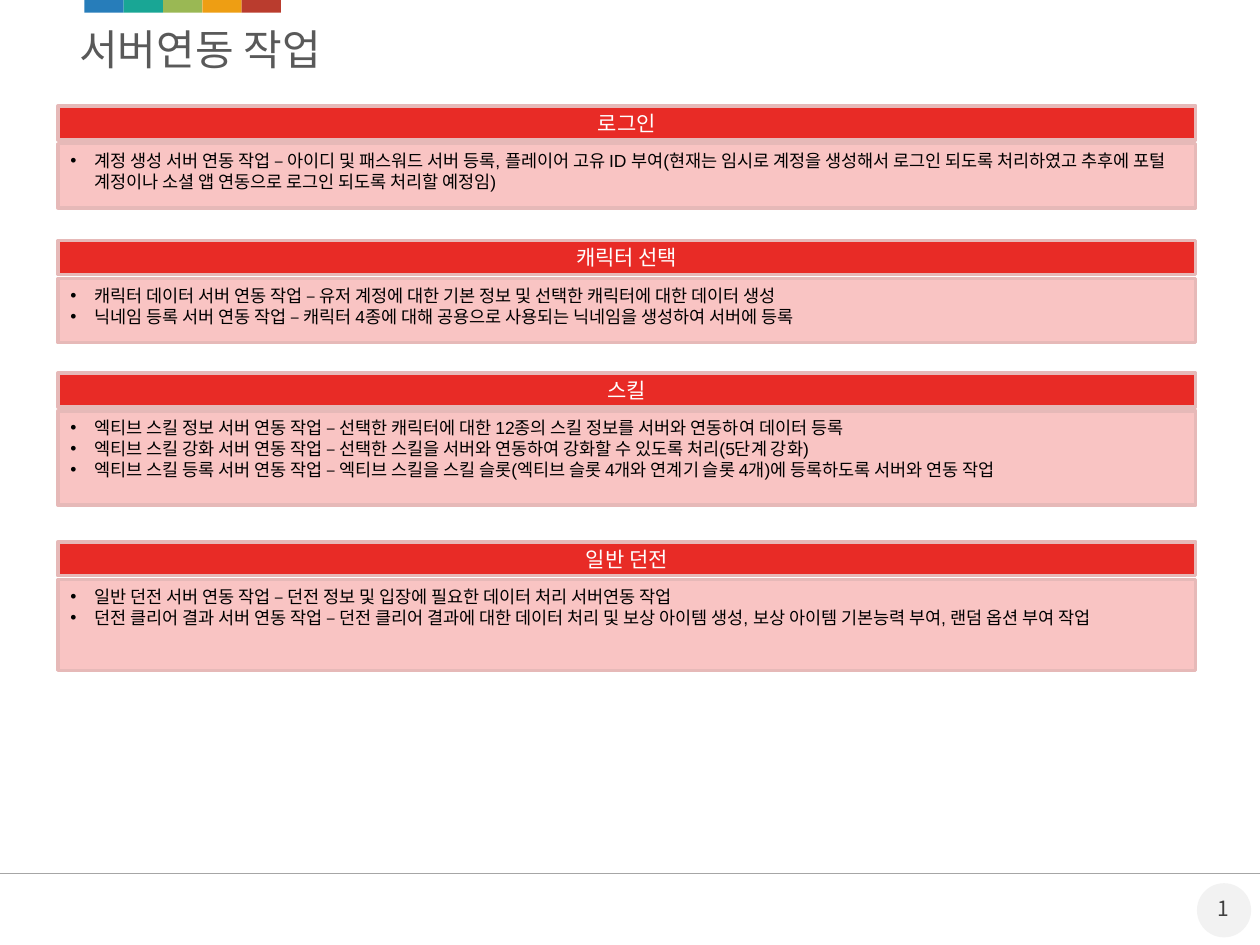
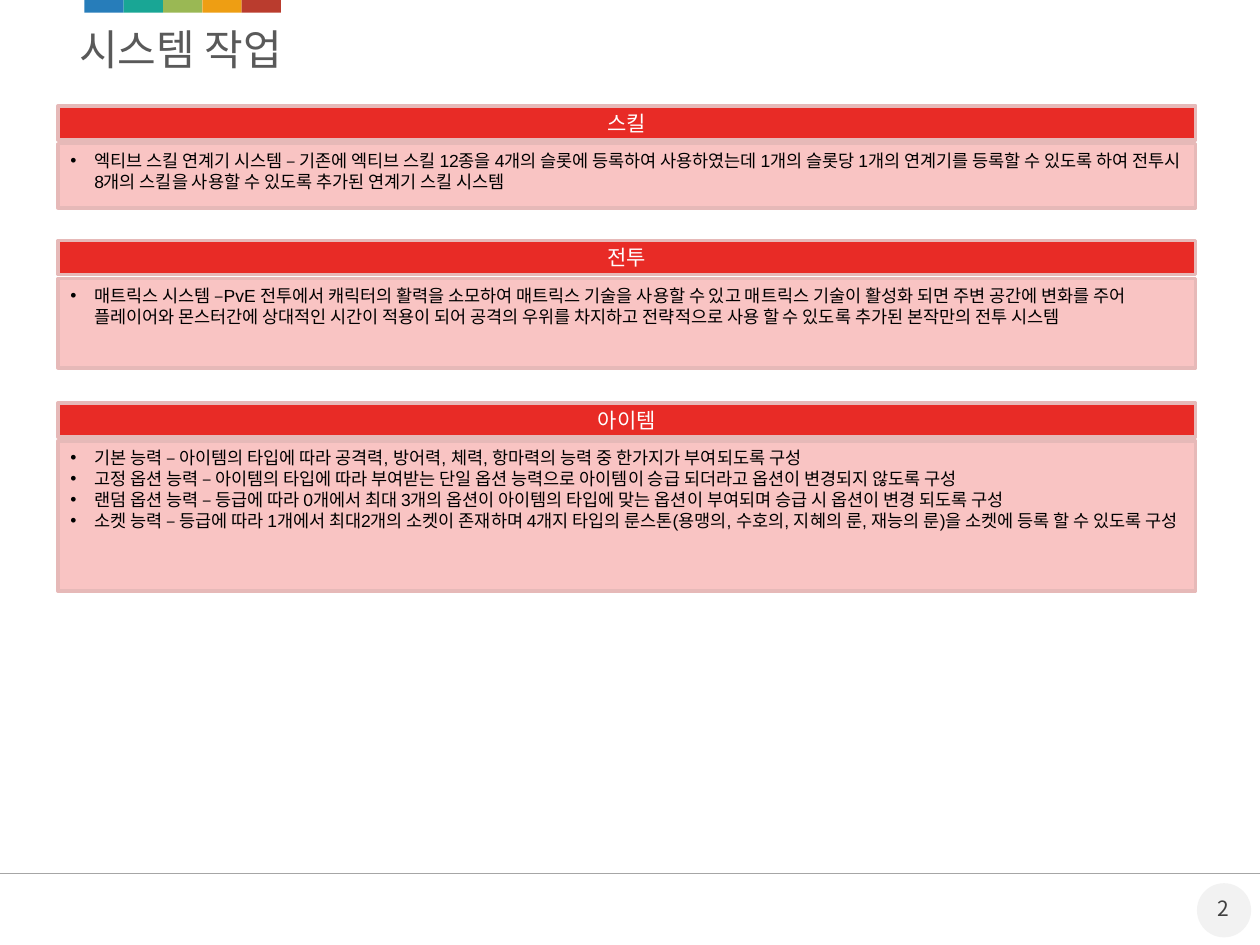
"""Build two work-summary slides made of titled red panels."""
import pptx
import pptx.dml.color
import pptx.enum.shapes
import pptx.enum.text
import pptx.oxml
import pptx.oxml.ns
import pptx.util
from lxml import etree

Inches = pptx.util.Inches
Pt = pptx.util.Pt
RGBColor = pptx.dml.color.RGBColor
MSO_SHAPE = pptx.enum.shapes.MSO_SHAPE
PP_ALIGN = pptx.enum.text.PP_ALIGN
MSO_ANCHOR = pptx.enum.text.MSO_ANCHOR
qn = pptx.oxml.ns.qn

WHITE = RGBColor(0xFF, 0xFF, 0xFF)
BLACK = RGBColor(0x00, 0x00, 0x00)
TITLE_GREY = RGBColor(0x59, 0x59, 0x59)
NUMBER_GREY = RGBColor(0x40, 0x40, 0x40)
RULE_GREY = RGBColor(0xA6, 0xA6, 0xA6)
BADGE_GREY = RGBColor(0xF2, 0xF2, 0xF2)
HEADER_RED = RGBColor(0xE8, 0x2B, 0x26)
BODY_PINK = RGBColor(0xF9, 0xC4, 0xC3)
BORDER_PINK = RGBColor(0xE6, 0xB9, 0xB8)
BAND_COLORS = (
    RGBColor(0x27, 0x7D, 0xBA),
    RGBColor(0x19, 0xA6, 0x95),
    RGBColor(0x9A, 0xB8, 0x54),
    RGBColor(0xEE, 0x9E, 0x13),
    RGBColor(0xBA, 0x3C, 0x2E),
)
FONT = "Arial"
NUMBER_FONT = "Noto Sans CJK KR"

PANEL_LEFT, PANEL_WIDTH = 0.46, 9.03
HEADER_HEIGHT, BODY_OFFSET = 0.27, 0.3

SLIDES = [
    ("서버연동 작업", [
        (0.84, 0.51, "로그인", [
            "계정 생성 서버 연동 작업 – 아이디 및 패스워드 서버 등록, 플레이어 고유 ID 부여(현재는 임시로 계정을 생성해서 "
            "로그인 되도록 처리하였고 추후에 포털 계정이나 소셜 앱 연동으로 로그인 되도록 처리할 예정임)",
        ]),
        (1.91, 0.51, "캐릭터 선택", [
            "캐릭터 데이터 서버 연동 작업 – 유저 계정에 대한 기본 정보 및 선택한 캐릭터에 대한 데이터 생성",
            "닉네임 등록 서버 연동 작업 – 캐릭터 4종에 대해 공용으로 사용되는 닉네임을 생성하여 서버에 등록",
        ]),
        (2.96, 0.75, "스킬", [
            "엑티브 스킬 정보 서버 연동 작업 – 선택한 캐릭터에 대한 12종의 스킬 정보를 서버와 연동하여 데이터 등록",
            "엑티브 스킬 강화 서버 연동 작업 – 선택한 스킬을 서버와 연동하여 강화할 수 있도록 처리(5단계 강화)",
            "엑티브 스킬 등록 서버 연동 작업 – 엑티브 스킬을 스킬 슬롯(엑티브 슬롯 4개와 연계기 슬롯 4개)에 "
            "등록하도록 서버와 연동 작업",
        ]),
        (4.3, 0.72, "일반 던전", [
            "일반 던전 서버 연동 작업 – 던전 정보 및 입장에 필요한 데이터 처리 서버연동 작업",
            "던전 클리어 결과 서버 연동 작업 – 던전 클리어 결과에 대한 데이터 처리 및 보상 아이템 생성, "
            "보상 아이템 기본능력 부여, 랜덤 옵션 부여 작업",
        ]),
    ]),
    ("시스템 작업", [
        (0.84, 0.51, "스킬", [
            "엑티브 스킬 연계기 시스템 – 기존에 엑티브 스킬 12종을 4개의 슬롯에 등록하여 사용하였는데 1개의 슬롯당 "
            "1개의 연계기를 등록할 수 있도록 하여 전투시 8개의 스킬을 사용할 수 있도록 추가된 연계기 스킬 시스템",
        ]),
        (1.91, 0.71, "전투", [
            "매트릭스 시스템 –PvE 전투에서 캐릭터의 활력을 소모하여 매트릭스 기술을 사용할 수 있고 매트릭스 기술이 "
            "활성화 되면 주변 공간에 변화를 주어 플레이어와 몬스터간에 상대적인 시간이 적용이 되어 공격의 우위를 "
            "차지하고 전략적으로 사용 할 수 있도록 추가된 본작만의 전투 시스템",
        ]),
        (3.2, 1.19, "아이템", [
            "기본 능력 – 아이템의 타입에 따라 공격력, 방어력, 체력, 항마력의 능력 중 한가지가 부여되도록 구성",
            "고정 옵션 능력 – 아이템의 타입에 따라 부여받는 단일 옵션 능력으로 아이템이 승급 되더라고 옵션이 변경되지 "
            "않도록 구성",
            "랜덤 옵션 능력 – 등급에 따라 0개에서 최대 3개의 옵션이 아이템의 타입에 맞는 옵션이 부여되며 승급 시 옵션이 "
            "변경 되도록 구성",
            "소켓 능력 – 등급에 따라 1개에서 최대2개의 소켓이 존재하며 4개지 타입의 룬스톤(용맹의, 수호의, 지혜의 룬, "
            "재능의 룬)을 소켓에 등록 할 수 있도록 구성",
        ]),
    ]),
]


def style_font(font, size, color, name=FONT):
    """Set size, colour and typeface of a font."""
    font.size = Pt(size)
    font.color.rgb = color
    font.name = name


def add_box(shapes, kind, left, top, width, height, fill, border=None):
    """Add a flat filled shape, with a border if a colour is given."""
    sp = shapes.add_shape(kind, Inches(left), Inches(top), Inches(width), Inches(height))
    sp.shadow.inherit = False
    sp.fill.solid()
    sp.fill.fore_color.rgb = fill
    if border is None:
        sp.line.fill.background()
    else:
        sp.line.color.rgb = border
        sp.line.width = Pt(2)
    return sp


def add_bullet(p):
    """Give a paragraph a hanging round bullet."""
    pPr = p._p.get_or_add_pPr()
    pPr.set("marL", str(Inches(0.19)))
    pPr.set("indent", str(-Inches(0.19)))
    etree.SubElement(pPr, qn("a:buFont")).set("typeface", FONT)
    etree.SubElement(pPr, qn("a:buChar")).set("char", "•")


def add_title(slide, title):
    """Place and format the title placeholder."""
    sp = slide.shapes.title
    sp.left, sp.top, sp.width, sp.height = Inches(0.63), 0, Inches(9.33), Inches(0.78)
    tf = sp.text_frame
    tf.text = title
    tf.margin_left = 0
    tf.vertical_anchor = MSO_ANCHOR.MIDDLE
    p = tf.paragraphs[0]
    p.alignment = PP_ALIGN.LEFT
    style_font(p.runs[0].font, 24, TITLE_GREY)


def add_color_band(slide, left, top, width, height):
    """Draw the row of coloured tabs at the top edge."""
    step = width / len(BAND_COLORS)
    for i, color in enumerate(BAND_COLORS):
        add_box(slide.shapes, MSO_SHAPE.RECTANGLE, left + i * step, top, step, height, color)


def add_footer(slide, top, number):
    """Draw the footer rule and the slide number badge."""
    rule = slide.shapes.add_connector(
        pptx.enum.shapes.MSO_CONNECTOR.STRAIGHT, 0, Inches(top), Inches(10), Inches(top))
    rule.line.color.rgb = RULE_GREY
    rule.line.width = Pt(0.25)
    etree.SubElement(rule._element.spPr, qn("a:effectLst"))

    add_box(slide.shapes, MSO_SHAPE.OVAL, 9.5, top + 0.08, 0.43, 0.43, BADGE_GREY)
    sp = slide.shapes.add_textbox(Inches(9.52), Inches(top + 0.13), Inches(0.38), Inches(0.28))
    tf = sp.text_frame
    tf.word_wrap = False
    p = tf.paragraphs[0]
    p.alignment = PP_ALIGN.CENTER
    r = p.add_run()
    r.text = str(number)
    style_font(r.font, 12, NUMBER_GREY, NUMBER_FONT)
    r._r.tag = qn("a:fld")
    r._r.set("id", "{B6F15528-21DE-4FAA-801E-634DDDAF4B2B}")
    r._r.set("type", "slidenum")


def add_panel(slide, left, top, width, body_height, heading, items):
    """Draw a red heading bar with a bulleted body below it."""
    shapes = slide.shapes.add_group_shape().shapes
    header = add_box(shapes, MSO_SHAPE.RECTANGLE, left, top, width, HEADER_HEIGHT,
                     HEADER_RED, BORDER_PINK)
    tf = header.text_frame
    tf.text = heading
    tf.vertical_anchor = MSO_ANCHOR.MIDDLE
    p = tf.paragraphs[0]
    p.alignment = PP_ALIGN.CENTER
    style_font(p.runs[0].font, 12, WHITE)

    body = add_box(shapes, MSO_SHAPE.RECTANGLE, left, top + BODY_OFFSET, width, body_height,
                   BODY_PINK, BORDER_PINK)
    tf = body.text_frame
    tf.word_wrap = True
    tf.vertical_anchor = MSO_ANCHOR.TOP
    tf.text = "\n".join(items)
    for p in tf.paragraphs:
        p.alignment = PP_ALIGN.LEFT
        add_bullet(p)
        style_font(p.runs[0].font, 10, BLACK)


def add_work_slide(prs, number, title, panels):
    """Add one slide with its title, band, footer and panels."""
    slide = prs.slides.add_slide(prs.slide_layouts[5])
    add_color_band(slide, 0.67, 0, 1.56, 0.1)
    add_footer(slide, 6.93, number)
    add_title(slide, title)
    for top, body_height, heading, items in panels:
        add_panel(slide, PANEL_LEFT, top, PANEL_WIDTH, body_height, heading, items)


def main():
    """Build the presentation and save it."""
    prs = pptx.Presentation()
    prs.slide_width, prs.slide_height = Inches(10), Inches(7.5)
    for number, (title, panels) in enumerate(SLIDES, 1):
        add_work_slide(prs, number, title, panels)
    prs.save("out.pptx")


if __name__ == "__main__":
    main()
